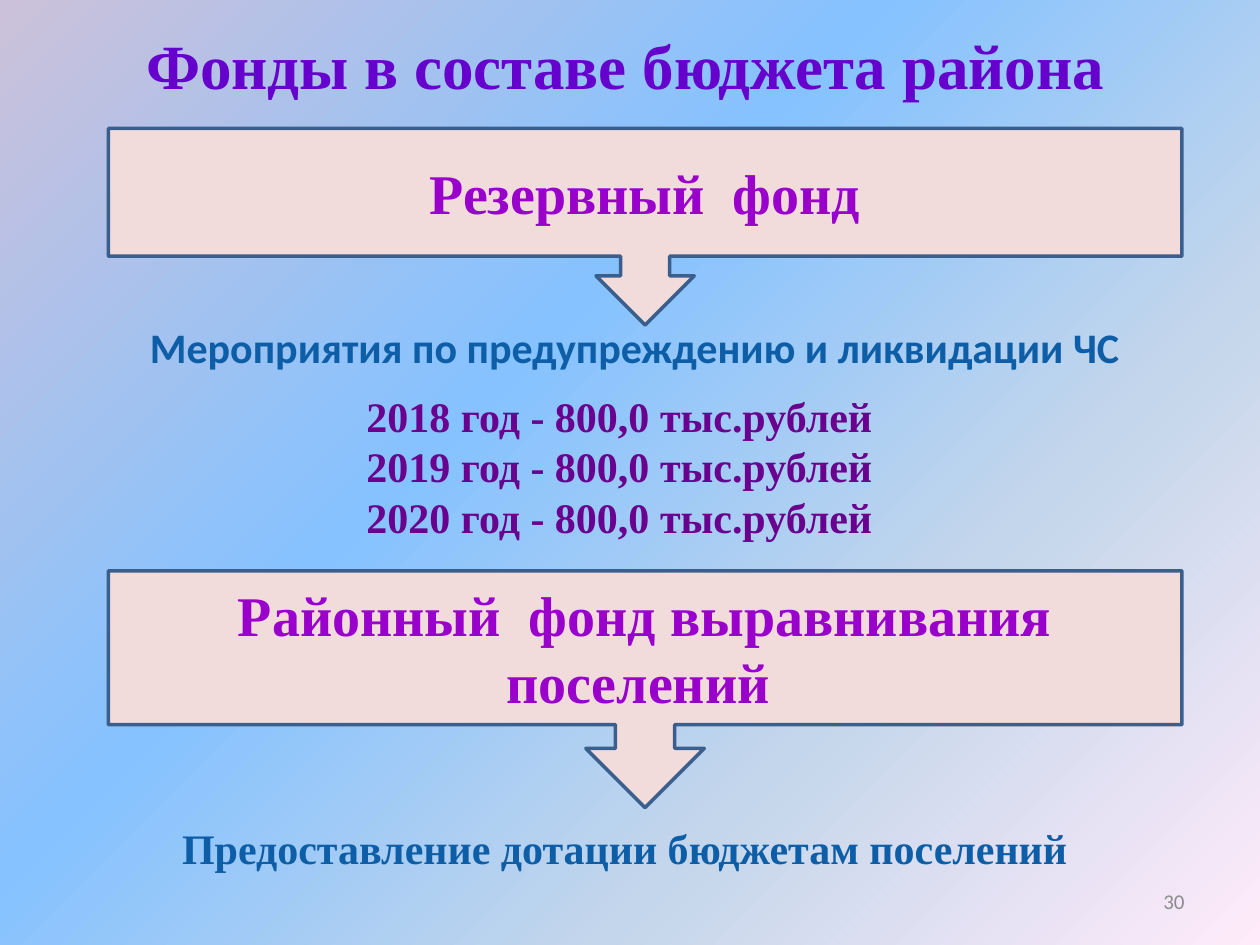
"""Build the slide on the funds within the district budget."""
from dataclasses import dataclass

from lxml import etree
from pptx import Presentation
from pptx.dml.color import RGBColor
from pptx.enum import shapes, text
from pptx.oxml.ns import qn
from pptx.slide import Slide
from pptx.util import Inches, Pt


@dataclass(frozen=True)
class Style:
    """Type settings of one kind of text."""
    size: int
    color: str
    bold: bool = True
    font: str = "Times New Roman"


@dataclass(frozen=True)
class Theme:
    """Colours and type sizes of the slide."""
    title: Style = Style(36, "6600CC")
    fund: Style = Style(32, "9900CC")
    purpose: Style = Style(24, "0D5EA7")
    measure: Style = Style(24, "0D5EA7", font="Calibri")
    amount: Style = Style(24, "69008E")
    number: Style = Style(12, "8C8C8C", False, "Calibri")
    fill: str = "F2DCDB"
    line: str = "3A5F8C"
    line_width: float = 2
    backdrop: tuple = ((0, "CCC1DA"), (40, "85C2FF"), (70, "C4D6EB"), (100, "FFEBFA"))
    backdrop_angle: int = 315


@dataclass(frozen=True)
class Block:
    """Lines of text with their place and style."""
    left: float
    top: float
    width: float
    height: float
    lines: tuple[str, ...]
    style: Style
    align: text.PP_ALIGN = text.PP_ALIGN.CENTER
    anchor: text.MSO_ANCHOR = text.MSO_ANCHOR.TOP
    right_inset: float = 0.1

    @property
    def bounds(self) -> tuple[int, ...]:
        """Return the place as lengths."""
        return tuple(Inches(v) for v in (self.left, self.top, self.width, self.height))


THEME = Theme()
LEFT, MIDDLE = text.PP_ALIGN.LEFT, text.MSO_ANCHOR.MIDDLE
FUND_LEFT, FUND_WIDTH = 0.86, 8.52

FUNDS = (
    Block(FUND_LEFT, 1.02, FUND_WIDTH, 1.56, ("Резервный  фонд",), THEME.fund, anchor=MIDDLE),
    Block(FUND_LEFT, 4.53, FUND_WIDTH, 1.88, ("Районный  фонд выравнивания поселений ",),
          THEME.fund, anchor=MIDDLE),
)
TEXTS = (
    Block(0.55, 0.23, 9.08, 0.56, ("Фонды в составе бюджета района",), THEME.title,
          anchor=MIDDLE, right_inset=0.35),
    Block(0.78, 2.5, 8.59, 0.51, ("Мероприятия по предупреждению и ликвидации ЧС ",),
          THEME.measure),
    Block(2.81, 3.05, 4.92, 1.31,
          tuple(f"{year} год - 800,0 тыс.рублей" for year in (2018, 2019, 2020)),
          THEME.amount, LEFT),
    Block(FUND_LEFT, 6.48, 8.28, 0.51, ("Предоставление дотации бюджетам поселений ",),
          THEME.purpose),
    Block(7.17, 6.95, 2.33, 0.4, ("30",), THEME.number, text.PP_ALIGN.RIGHT, MIDDLE),
)


def paint_backdrop(slide: Slide) -> None:
    """Fill the background with the diagonal gradient."""
    fill = slide.background.fill
    fill.gradient()
    fill.gradient_angle = THEME.backdrop_angle
    stops = slide.background._cSld.find(".//" + qn("a:gsLst"))
    for stop in list(stops):
        stops.remove(stop)
    for percent, color in THEME.backdrop:
        stop = etree.SubElement(stops, qn("a:gs"), pos=str(percent * 1000))
        etree.SubElement(stop, qn("a:srgbClr"), val=color)


def write(shape, block: Block) -> None:
    """Put the lines of a block into a shape."""
    frame = shape.text_frame
    frame.word_wrap = True
    frame.vertical_anchor = block.anchor
    frame.margin_right = Inches(block.right_inset)
    frame.text = "\n".join(block.lines)
    for paragraph in frame.paragraphs:
        paragraph.alignment = block.align
        font = paragraph.font
        font.name, font.size, font.bold = block.style.font, Pt(block.style.size), block.style.bold
        font.color.rgb = RGBColor.from_string(block.style.color)


def add_fund(slide: Slide, block: Block) -> None:
    """Draw a fund as a callout with a down arrow."""
    callout = slide.shapes.add_shape(shapes.MSO_SHAPE.DOWN_ARROW_CALLOUT, *block.bounds)
    callout.shadow.inherit = False
    callout.fill.solid()
    callout.fill.fore_color.rgb = RGBColor.from_string(THEME.fill)
    callout.line.color.rgb = RGBColor.from_string(THEME.line)
    callout.line.width = Pt(THEME.line_width)
    write(callout, block)


def main() -> None:
    """Build and save the deck."""
    deck = Presentation()
    deck.slide_width, deck.slide_height = Inches(10), Inches(7.5)
    slide = deck.slides.add_slide(deck.slide_layouts[6])
    paint_backdrop(slide)
    for block in FUNDS:
        add_fund(slide, block)
    for block in TEXTS:
        write(slide.shapes.add_textbox(*block.bounds), block)
    deck.save("out.pptx")


if __name__ == "__main__":
    main()
